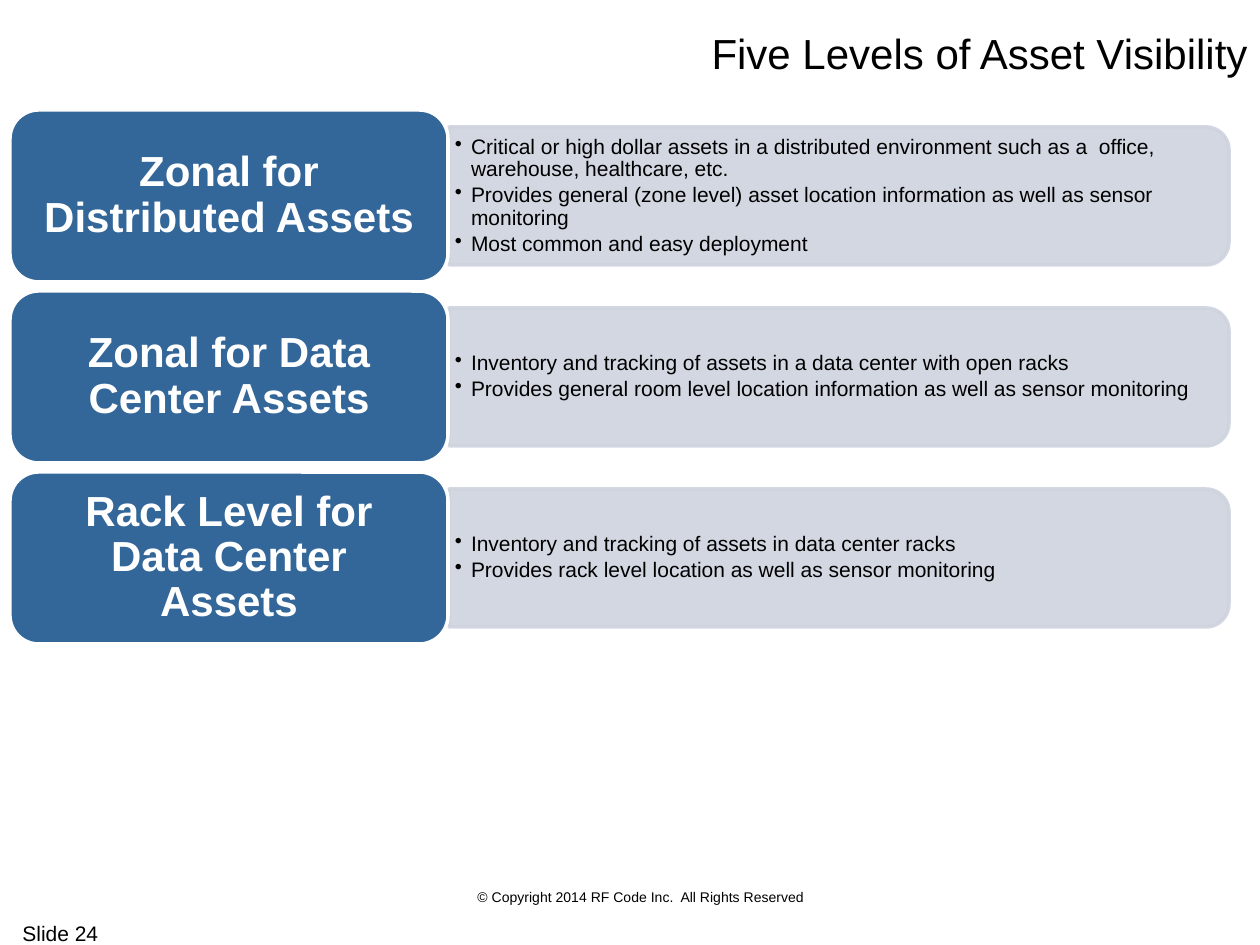
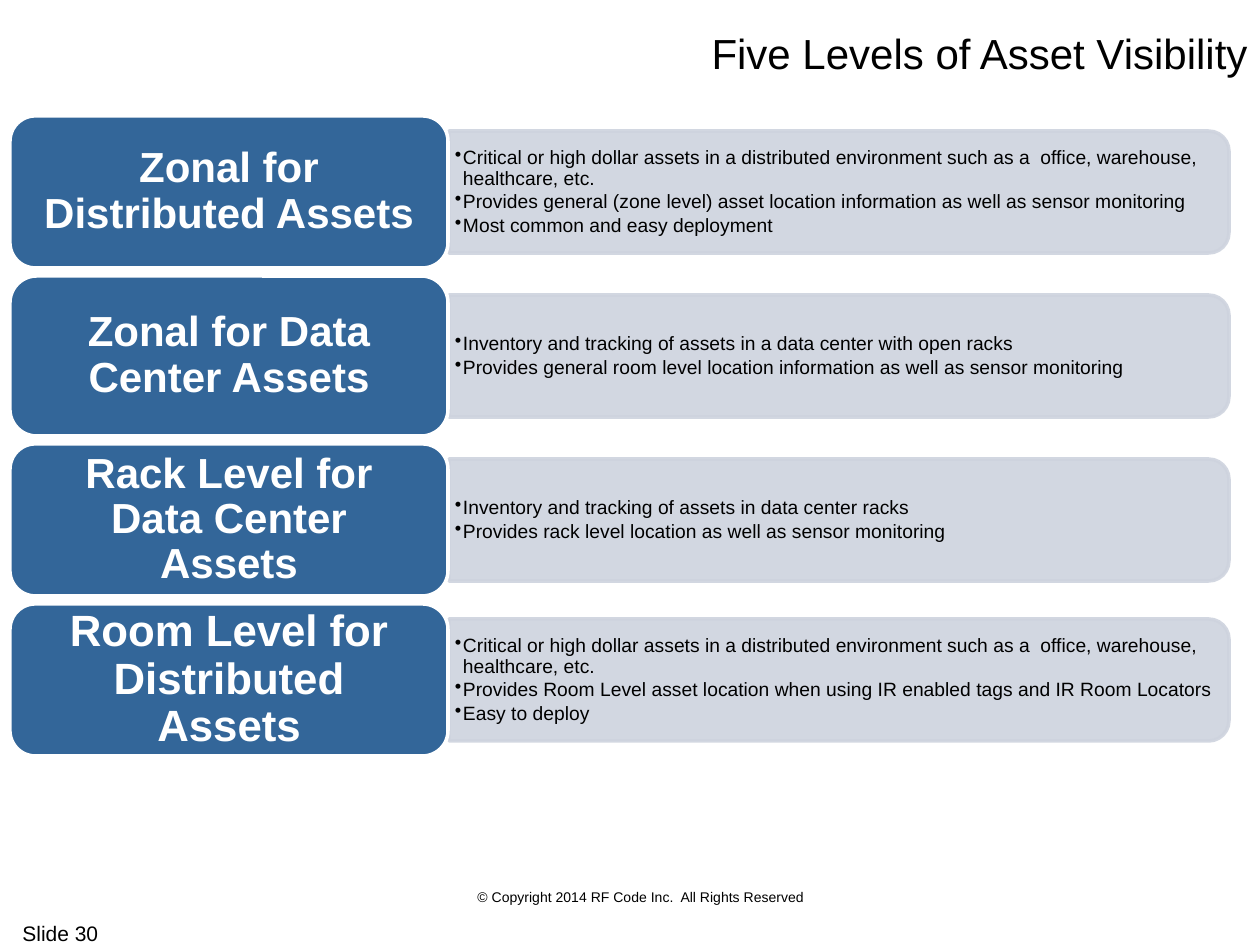
from dataclasses import dataclass

from lxml import etree
from pptx import Presentation
from pptx import util as u
from pptx.dml.color import RGBColor
from pptx.enum import shapes, text
from pptx.oxml.ns import qn

TITLE = "Five Levels of Asset Visibility"
COPYRIGHT = "© Copyright 2014 RF Code Inc.  All Rights Reserved"
CRITICAL = ("Critical or high dollar assets in a distributed environment "
            "such as a  office, warehouse, healthcare, etc.")

ZONAL_DISTRIBUTED = ("Zonal for Distributed Assets", [
    CRITICAL,
    "Provides general (zone level) asset location information as well as sensor monitoring",
    "Most common and easy deployment",
])
ZONAL_DATA_CENTER = ("Zonal for Data Center Assets", [
    "Inventory and tracking of assets in a data center with open racks",
    "Provides general room level location information as well as sensor monitoring",
])
RACK_DATA_CENTER = ("Rack Level for Data Center Assets", [
    "Inventory and tracking of assets in data center racks",
    "Provides rack level location as well as sensor monitoring",
])
ROOM_DISTRIBUTED = ("Room Level for Distributed Assets", [
    CRITICAL,
    "Provides Room Level asset location when using IR enabled tags and IR Room Locators",
    "Easy to deploy",
])

# Each row: level, tab height (px), tab type size (pt)
SLIDES = [
    dict(number=24, top=110, gap=9, panel_height=138, detail_size=12, indent=16, rows=[
        (ZONAL_DISTRIBUTED, 172, 24),
        (ZONAL_DATA_CENTER, 172, 24),
        (RACK_DATA_CENTER, 172, 24),
    ]),
    dict(number=30, top=116, gap=8, panel_height=122, detail_size=11, indent=8, rows=[
        (ZONAL_DISTRIBUTED, 152, 24),
        (ZONAL_DATA_CENTER, 160, 24),
        (RACK_DATA_CENTER, 152, 24),
        (ROOM_DISTRIBUTED, 152, 25),
    ]),
]


@dataclass(frozen=True)
class Theme:
    font: str = "Arial"
    ink: str = "000000"
    tab: str = "336699"
    tab_ink: str = "FFFFFF"
    panel: str = "CED3DE"
    panel_opacity: int = 90
    outline: int = 2
    title_size: int = 24
    number_size: int = 12
    copyright_size: int = 8
    line_spacing: float = 0.9


THEME = Theme()
TAB_LEFT, TAB_WIDTH, TAB_INSET = 10, 438, 20
PANEL_LEFT, PANEL_WIDTH = 449, 780
DETAIL_WIDTH = 772
LEFT, CENTER, RIGHT = text.PP_ALIGN.LEFT, text.PP_ALIGN.CENTER, text.PP_ALIGN.RIGHT


def px(length):
    return u.Emu(round(length * 914400 / 126))


def style(paragraph, size, color=THEME.ink, bold=False, align=LEFT):
    paragraph.alignment = align
    font = paragraph.font
    font.name, font.size, font.bold = THEME.font, u.Pt(size), bold
    font.color.rgb = RGBColor.from_string(color)


def set_insets(frame, side, end):
    frame.margin_left = frame.margin_right = px(side)
    frame.margin_top = frame.margin_bottom = px(end)


def add_text_frame(slide, box, anchor=text.MSO_ANCHOR.TOP):
    frame = slide.shapes.add_textbox(*map(px, box)).text_frame
    frame.word_wrap = True
    frame.vertical_anchor = anchor
    return frame


def add_label(slide, wording, box, size, align, anchor=text.MSO_ANCHOR.TOP):
    label = add_text_frame(slide, box, anchor).paragraphs[0]
    label.text = wording
    style(label, size, align=align)


def add_block(slide, kind, box, fill, outline):
    block = slide.shapes.add_shape(kind, *map(px, box))
    block.shadow.inherit = False
    block.fill.solid()
    block.fill.fore_color.rgb = RGBColor.from_string(fill)
    block.line.color.rgb = RGBColor.from_string(outline)
    block.line.width = u.Pt(THEME.outline)
    return block


def add_panel(slide, middle, height):
    """Place the detail panel, turned so its rounded end faces right."""
    left = PANEL_LEFT + (PANEL_WIDTH - height) / 2
    panel = add_block(slide, shapes.MSO_SHAPE.ROUND_2_SAME_RECTANGLE,
                      (left, middle - PANEL_WIDTH / 2, height, PANEL_WIDTH),
                      THEME.panel, THEME.panel)
    panel.rotation = 90
    for color in panel.fill._xPr.iter(qn("a:srgbClr")):
        etree.SubElement(color, qn("a:alpha"), val=str(THEME.panel_opacity * 1000))


def add_bullet(paragraph, indent):
    properties = paragraph._p.get_or_add_pPr()
    properties.set("marL", str(px(indent)))
    properties.set("indent", str(-px(indent)))
    etree.SubElement(properties, qn("a:buChar"), char="•")


def add_details(slide, details, middle, height, size, indent):
    frame = add_text_frame(slide, (PANEL_LEFT, middle - height / 2, DETAIL_WIDTH, height),
                           text.MSO_ANCHOR.MIDDLE)
    set_insets(frame, 6, 3)
    for index, detail in enumerate(details):
        paragraph = frame.add_paragraph() if index else frame.paragraphs[0]
        paragraph.text = detail
        add_bullet(paragraph, indent)
        paragraph.line_spacing = THEME.line_spacing
        paragraph.space_after = u.Pt(round(size * 0.15, 1))
        style(paragraph, size)


def add_tab(slide, name, top, height, size):
    tab = add_block(slide, shapes.MSO_SHAPE.ROUNDED_RECTANGLE,
                    (TAB_LEFT, top, TAB_WIDTH, height), THEME.tab, THEME.tab_ink)
    frame = tab.text_frame
    frame.word_wrap = True
    frame.vertical_anchor = text.MSO_ANCHOR.MIDDLE
    set_insets(frame, TAB_INSET, 14)
    heading = frame.paragraphs[0]
    heading.text = name
    heading.line_spacing = THEME.line_spacing
    style(heading, size, THEME.tab_ink, bold=True, align=CENTER)


def add_frame(slide, number):
    """Add the title and footers that every slide carries."""
    add_label(slide, COPYRIGHT, (431, 882, 420, 29), THEME.copyright_size, CENTER)
    add_label(slide, f"Slide {number}", (10, 914, 252, 38), THEME.number_size, LEFT)
    add_label(slide, TITLE, (10, 21, 1250, 63), THEME.title_size, RIGHT,
              text.MSO_ANCHOR.MIDDLE)


def add_levels(slide, content):
    top, panel_height = content["top"], content["panel_height"]
    for (name, details), tab_height, tab_size in content["rows"]:
        middle = top + tab_height / 2
        add_panel(slide, middle, panel_height)
        add_details(slide, details, middle, panel_height - 13,
                    content["detail_size"], content["indent"])
        add_tab(slide, name, top, tab_height, tab_size)
        top += tab_height + content["gap"]


def main():
    deck = Presentation()
    deck.slide_width, deck.slide_height = px(1260), px(945)
    for content in SLIDES:
        slide = deck.slides.add_slide(deck.slide_layouts[6])
        add_frame(slide, content["number"])
        add_levels(slide, content)
    deck.save("out.pptx")


if __name__ == "__main__":
    main()
